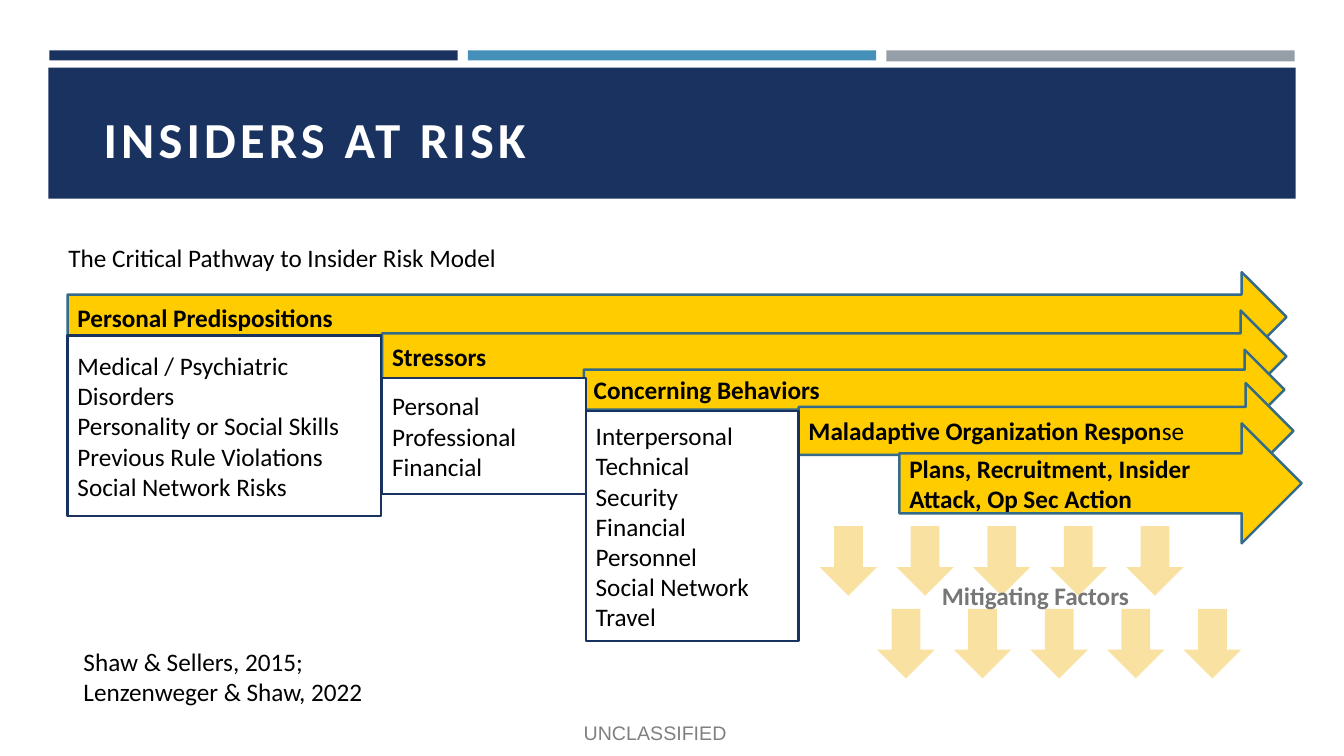
from dataclasses import dataclass

from lxml import etree
from pptx import Presentation
from pptx.dml.color import RGBColor
from pptx.enum import shapes, text
from pptx.util import Inches, Pt

MSO = shapes.MSO_SHAPE
ANCHOR = text.MSO_ANCHOR
ALIGN = text.PP_ALIGN


@dataclass(frozen=True)
class Theme:
    navy: str = "1A3260"
    blue: str = "4590B8"
    grey: str = "969FA7"
    white: str = "FFFFFF"
    black: str = "000000"
    gold: str = "FFCC00"
    pale_gold: str = "F9E2A1"
    arrow_line: str = "336B88"
    muted: str = "767676"
    marking: str = "808080"
    title_size: int = 36
    body_size: int = 18
    marking_size: int = 14
    line_width: float = 1.75
    font: str = "Calibri"
    marking_font: str = "Arial"


T = Theme()


@dataclass(frozen=True)
class Box:
    left: float
    top: float
    width: float
    height: float

    def emu(self) -> list[int]:
        return [Inches(v) for v in (self.left, self.top, self.width, self.height)]


@dataclass(frozen=True)
class Style:
    size: int = T.body_size
    color: str = T.black
    bold: bool = False
    font: str = T.font
    spacing: int = 0  # hundredths of a point


@dataclass(frozen=True)
class Stage:
    box: Box
    label: str
    plain_tail: str = ""


@dataclass(frozen=True)
class Details:
    box: Box
    lines: tuple[str, ...]


@dataclass(frozen=True)
class Caption:
    box: Box
    label: str
    style: Style = Style()
    frame: tuple = ()
    align: ALIGN = ALIGN.LEFT


BODY, BOLD = Style(), Style(bold=True)

BANDS = [
    (Box(0.49, 0.5, 4.05, 0.1), T.navy),
    (Box(4.64, 0.5, 4.05, 0.1), T.blue),
    (Box(8.79, 0.5, 4.05, 0.11), T.grey),
    (Box(0.48, 0.67, 12.37, 1.3), T.navy),
]

STAGES = [
    Stage(Box(0.67, 2.7, 12.09, 0.89), "Personal Predispositions"),
    Stage(Box(3.79, 3.08, 8.97, 0.91), "Stressors"),
    Stage(Box(5.79, 3.47, 6.95, 0.79), "Concerning Behaviors"),
    Stage(Box(7.92, 3.8, 4.91, 0.95), "Maladaptive Organization Respon", "se"),
    Stage(Box(8.92, 4.2, 3.99, 1.19),
          "Plans, Recruitment, Insider Attack, Op Sec Action"),
]

DETAILS = [
    Details(Box(0.67, 3.33, 3.11, 1.79),
            ("Medical / Psychiatric Disorders", "Personality or Social Skills",
             "Previous Rule Violations", "Social Network Risks")),
    Details(Box(3.79, 3.75, 2.02, 1.15), ("Personal", "Professional", "Financial")),
    Details(Box(5.81, 4.08, 2.11, 2.28),
            ("Interpersonal", "Technical", "Security", "Financial", "Personnel",
             "Social Network", "Travel")),
]

CAPTIONS = [
    Caption(Box(0.93, 0.83, 11.83, 1.08), "INSIDERS AT RISK",
            Style(T.title_size, T.white, True, spacing=300),
            (("vertical_anchor", ANCHOR.MIDDLE),)),
    Caption(Box(5.69, 7.1, 1.63, 0.34), "UNCLASSIFIED",
            Style(T.marking_size, T.marking, font=T.marking_font),
            (("word_wrap", False),)),
    Caption(Box(0.73, 6.36, 3, 0.71), "Shaw & Sellers, 2015; Lenzenweger & Shaw, 2022"),
    Caption(Box(0.58, 2.35, 5.42, 0.4), "The Critical Pathway to Insider Risk Model"),
]

MITIGATION = Caption(Box(8.83, 5.71, 2.88, 0.4), "Mitigating Factors",
                     Style(color=T.muted, bold=True), align=ALIGN.CENTER)

# Rows of mitigating arrows: left and top of the first one
MITIGATION_ROWS = [(8.13, 5.22), (8.7, 6.04)]
MITIGATION_COUNT, MITIGATION_PITCH = 5, 0.76


def set_format(target, values: dict) -> None:
    for name, value in values.items():
        setattr(target, name, value)


def add_run(p, label: str, style: Style) -> None:
    r = p.add_run()
    r.text = label
    set_format(r.font, {"name": style.font, "size": Pt(style.size), "bold": style.bold})
    r.font.color.rgb = RGBColor.from_string(style.color)
    if style.spacing:
        r.font._element.set("spc", str(style.spacing))


def add_block(s, kind: MSO, box: Box, fill: str, line: str = ""):
    sp = s.shapes.add_shape(kind, *box.emu())
    sp.shadow.inherit = False
    sp.fill.solid()
    sp.fill.fore_color.rgb = RGBColor.from_string(fill)
    if line:
        sp.line.color.rgb = RGBColor.from_string(line)
        sp.line.width = Pt(T.line_width)
    else:
        sp.line.fill.background()
    return sp


def fill_text(tf, lines: list[list[tuple[str, Style]]], align: ALIGN = ALIGN.LEFT,
              **frame) -> None:
    set_format(tf, {"word_wrap": True, **frame})
    for i, runs in enumerate(lines):
        p = tf.add_paragraph() if i else tf.paragraphs[0]
        p.alignment = align
        for label, style in runs:
            add_run(p, label, style)


def add_caption(s, caption: Caption) -> None:
    tf = s.shapes.add_textbox(*caption.box.emu()).text_frame
    fill_text(tf, [[(caption.label, caption.style)]], caption.align, **dict(caption.frame))


def main() -> None:
    prs = Presentation()
    set_format(prs, {"slide_width": Inches(13.33), "slide_height": Inches(7.5)})
    s = prs.slides.add_slide(prs.slide_layouts[6])

    # Header bands
    for box, color in BANDS:
        add_block(s, MSO.RECTANGLE, box, color)

    # Title, marking, citation and subtitle
    for caption in CAPTIONS:
        add_caption(s, caption)

    # Pathway arrows
    for stage in STAGES:
        sp = add_block(s, MSO.RIGHT_ARROW, stage.box, T.gold, T.arrow_line)
        runs = [(stage.label, BOLD)]
        if stage.plain_tail:
            runs.append((stage.plain_tail, BODY))
        fill_text(sp.text_frame, [runs], vertical_anchor=ANCHOR.MIDDLE)

    # Detail boxes under the arrows
    for details in DETAILS:
        sp = add_block(s, MSO.RECTANGLE, details.box, T.white, T.navy)
        fill_text(sp.text_frame, [[(line, BODY)] for line in details.lines],
                  vertical_anchor=ANCHOR.MIDDLE)

    # Mitigating factors
    for left, top in MITIGATION_ROWS:
        for i in range(MITIGATION_COUNT):
            box = Box(left + i * MITIGATION_PITCH, top, 0.57, 0.69)
            add_block(s, MSO.DOWN_ARROW, box, T.pale_gold)
    add_caption(s, MITIGATION)

    prs.save("out.pptx")


if __name__ == "__main__":
    main()
